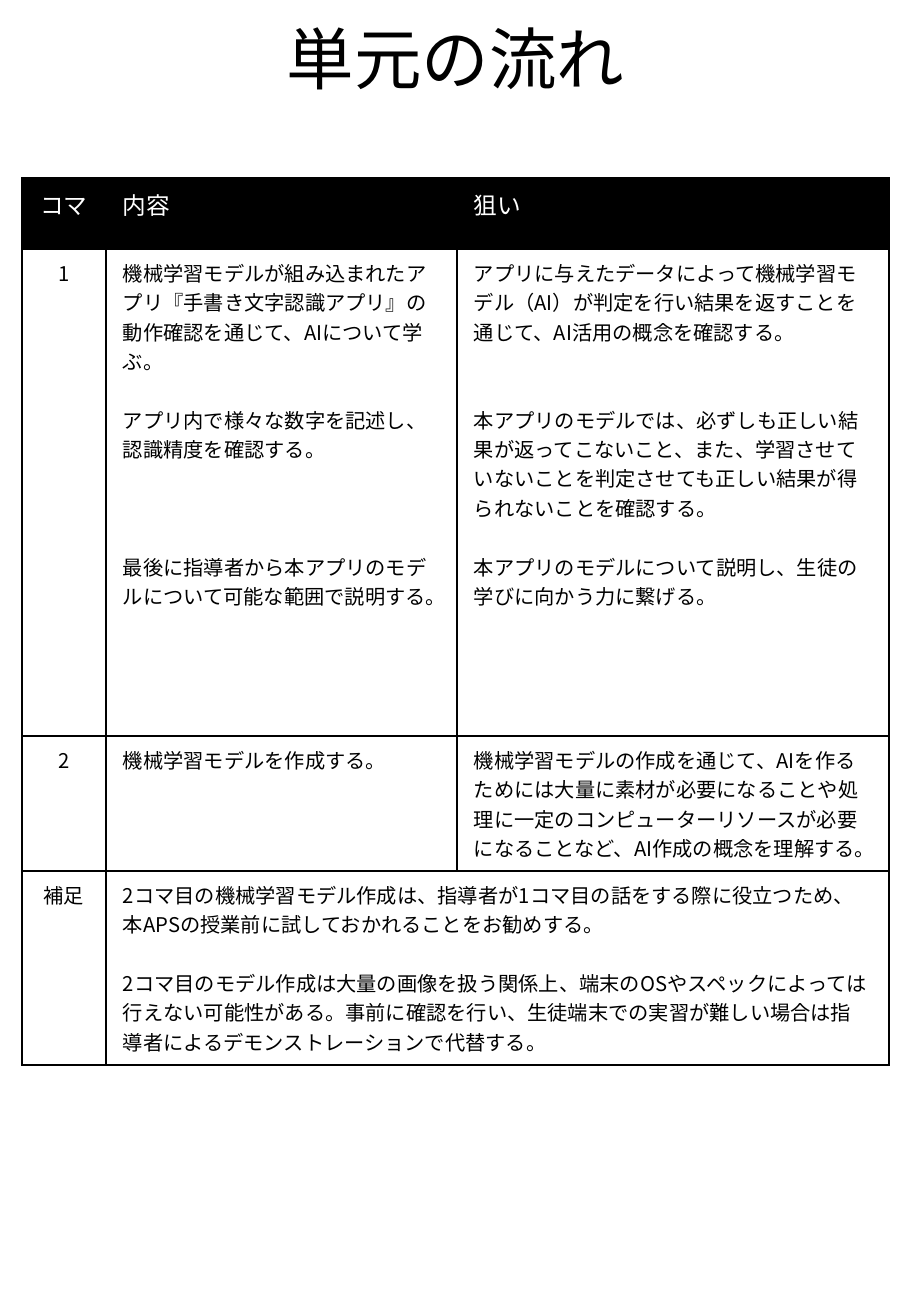
from dataclasses import dataclass

from lxml import etree
from pptx import Presentation
from pptx.dml.color import RGBColor
from pptx.enum.text import MSO_ANCHOR, PP_ALIGN
from pptx.oxml.ns import qn
from pptx.util import Pt

PX = 7526
CENTER, LEFT = PP_ALIGN.CENTER, PP_ALIGN.LEFT
BOTTOM, TOP = MSO_ANCHOR.BOTTOM, MSO_ANCHOR.TOP


@dataclass(frozen=True)
class Theme:
    """Colours, font and type sizes of the slide."""
    font: str = "Noto Sans CJK JP"
    black: str = "000000"
    white: str = "FFFFFF"
    title: int = 40
    head: int = 14
    body: int = 12
    line: float = 17.4


THEME = Theme()

COLUMNS = [84, 351, 432]
ROWS = [71, 487, 135, 194]

HEADER = ["コマ", "内容", "狙い"]
LESSONS = [
    [
        [("1", 0)],
        [
            ("機械学習モデルが組み込まれたアプリ『手書き文字認識アプリ』の動作確認を通じて、AIについて学ぶ。", 0),
            ("アプリ内で様々な数字を記述し、認識精度を確認する。", 1),
            ("最後に指導者から本アプリのモデルについて可能な範囲で説明する。", 3),
        ],
        [
            ("アプリに与えたデータによって機械学習モデル（AI）が判定を行い結果を返すことを通じて、AI活用の概念を確認する。", 0),
            ("本アプリのモデルでは、必ずしも正しい結果が返ってこないこと、また、学習させていないことを判定させても正しい結果が得られないことを確認する。", 2),
            ("本アプリのモデルについて説明し、生徒の学びに向かう力に繋げる。", 1),
        ],
    ],
    [
        [("2", 0)],
        [("機械学習モデルを作成する。", 0)],
        [("機械学習モデルの作成を通じて、AIを作るためには大量に素材が必要になることや処理に一定のコンピューターリソースが必要になることなど、AI作成の概念を理解する。", 0)],
    ],
    [
        [("補足", 0)],
        [
            ("2コマ目の機械学習モデル作成は、指導者が1コマ目の話をする際に役立つため、本APSの授業前に試しておかれることをお勧めする。", 0),
            ("2コマ目のモデル作成は大量の画像を扱う関係上、端末のOSやスペックによっては行えない可能性がある。事前に確認を行い、生徒端末での実習が難しい場合は指導者によるデモンストレーションで代替する。", 1),
        ],
        [],
    ],
]


def format_run(r, size, color):
    """Give a run its Latin and East Asian font, size and colour."""
    r.font.size = Pt(size)
    r.font.color.rgb = RGBColor.from_string(color)
    r.font.name = THEME.font
    rPr = r.font._element
    rPr.set("lang", "ja-JP")
    rPr.find(qn("a:latin")).addnext(
        etree.Element(qn("a:ea"), typeface=THEME.font))


def write_paragraphs(tf, items, size, color, align):
    """Write (text, blank lines before) pairs into a text frame."""
    for i, (text, gap) in enumerate(items):
        p = tf.add_paragraph() if i else tf.paragraphs[0]
        p.text = text
        p.alignment = align
        p.space_before = Pt(gap * THEME.line)
        for r in p.runs:
            format_run(r, size, color)


def add_title(s, text):
    """Add the centred title above the table."""
    tf = s.shapes.add_textbox(68 * PX, 7 * PX, 775 * PX, 98 * PX).text_frame
    tf.word_wrap = True
    tf.vertical_anchor = BOTTOM
    write_paragraphs(tf, [(text, 0)], THEME.title, THEME.black, CENTER)
    tf.paragraphs[0].line_spacing = 0.9


def set_borders(cell):
    """Draw a thin black line on the four sides of a cell."""
    tcPr = cell._tc.get_or_add_tcPr()
    for side in ("lnL", "lnR", "lnT", "lnB"):
        ln = etree.SubElement(tcPr, qn(f"a:{side}"), w=str(Pt(1)))
        fill = etree.SubElement(ln, qn("a:solidFill"))
        etree.SubElement(fill, qn("a:srgbClr"), val=THEME.black)


def fill_cell(cell, items, size, color, background, align):
    """Set the margins, borders, fill and text of a cell."""
    cell.margin_left = cell.margin_right = 17 * PX
    cell.margin_top = cell.margin_bottom = 9 * PX
    cell.vertical_anchor = TOP
    set_borders(cell)
    cell.fill.solid()
    cell.fill.fore_color.rgb = RGBColor.from_string(background)
    write_paragraphs(cell.text_frame, items, size, color, align)


def add_lesson_table(s):
    """Add the table of lessons with a merged supplement row."""
    rows = [[[(text, 0)] for text in HEADER]] + LESSONS
    table = s.shapes.add_table(
        len(ROWS), len(COLUMNS), 22 * PX, 178 * PX,
        sum(COLUMNS) * PX, sum(ROWS) * PX).table
    table.horz_banding = False
    for column, width in zip(table.columns, COLUMNS):
        column.width = width * PX
    for row, height in zip(table.rows, ROWS):
        row.height = height * PX
    last = len(ROWS) - 1
    table.cell(last, 1).merge(table.cell(last, 2))
    for i, row in enumerate(rows):
        style = ((THEME.body, THEME.black, THEME.white) if i
                 else (THEME.head, THEME.white, THEME.black))
        for j, items in enumerate(row):
            fill_cell(table.cell(i, j), items, *style, LEFT if j else CENTER)


def main():
    """Build the slide and save it."""
    prs = Presentation()
    prs.slide_width, prs.slide_height = 911 * PX, 1316 * PX
    s = prs.slides.add_slide(prs.slide_layouts[6])
    add_title(s, "単元の流れ")
    add_lesson_table(s)
    prs.save("out.pptx")


if __name__ == "__main__":
    main()
